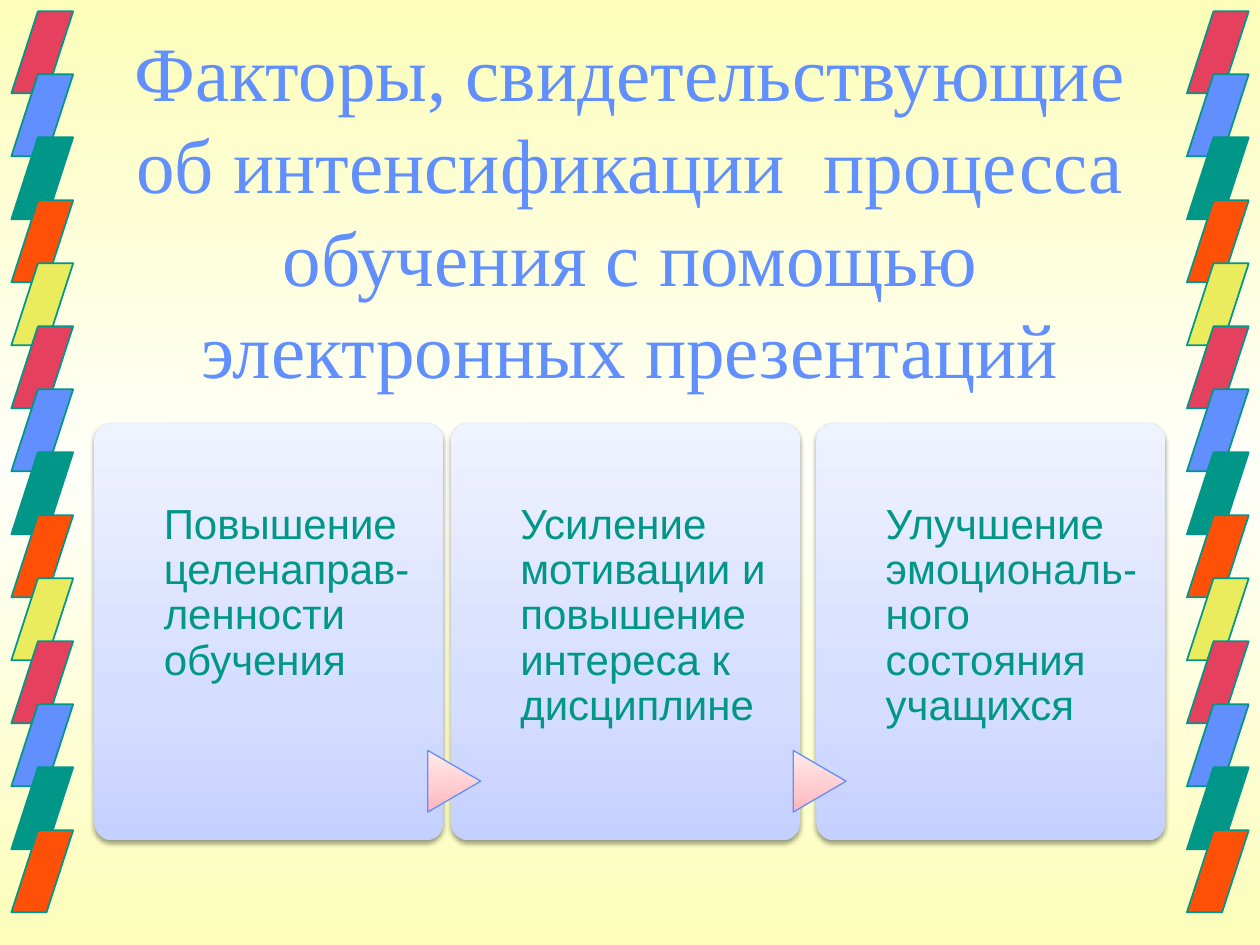
from copy import deepcopy

from lxml import etree
from pptx import Presentation
from pptx.dml.color import RGBColor
from pptx.enum.shapes import MSO_SHAPE
from pptx.enum.text import MSO_ANCHOR, PP_ALIGN
from pptx.oxml.ns import qn
from pptx.util import Inches, Pt

PARALLELOGRAM = MSO_SHAPE.PARALLELOGRAM
ROUNDED = MSO_SHAPE.ROUNDED_RECTANGLE
TRIANGLE = MSO_SHAPE.FLOWCHART_EXTRACT
TOP, MIDDLE = MSO_ANCHOR.TOP, MSO_ANCHOR.MIDDLE
LEFT, CENTER = PP_ALIGN.LEFT, PP_ALIGN.CENTER

RED = RGBColor(0xE5, 0x40, 0x5D)
BLUE = RGBColor(0x61, 0x8F, 0xFD)
GREEN = RGBColor(0x00, 0x96, 0x88)
ORANGE = RGBColor(0xFF, 0x50, 0x08)
YELLOW = RGBColor(0xEA, 0xEC, 0x5E)
BLACK = RGBColor(0x00, 0x00, 0x00)
CREAM = RGBColor(0xFC, 0xFE, 0xB9)
IVORY = RGBColor(0xFF, 0xFF, 0xF9)
RIBBON_COLORS = [RED, BLUE, GREEN, ORANGE, YELLOW]
PAGE_STOPS = [(0, CREAM), (0.5, IVORY), (1, CREAM)]
CARD_STOPS = [(0, RGBColor(0xC4, 0xD0, 0xFF)), (0.35, RGBColor(0xD6, 0xDE, 0xFF)),
              (1, RGBColor(0xEF, 0xF2, 0xFF))]
ARROW_STOPS = [(0, RGBColor(0xFF, 0xB3, 0xBA)), (0.35, RGBColor(0xFF, 0xCA, 0xCE)),
               (1, RGBColor(0xFF, 0xEB, 0xEC))]

TITLE = ("Факторы, свидетельствующие об интенсификации  процесса "
         "обучения с помощью электронных презентаций")
FACTORS = [
    (0.75, "Повышение целенаправ-ленности обучения"),
    (3.58, "Усиление мотивации и повышение интереса к дисциплине"),
    (6.48, "Улучшение эмоциональ-ного состояния учащихся"),
]
CARD_TOP, CARD_WIDTH, CARD_HEIGHT = 3.36, 2.77, 3.31


def set_gradient(fill, element, stops, angle):
    """Fill with a three-stop linear gradient that ignores shape rotation."""
    fill.gradient()
    fill.gradient_angle = angle
    gradient = element.find(".//" + qn("a:gradFill"))
    gradient.set("rotWithShape", "0")
    stop_list = gradient.find(qn("a:gsLst"))
    stop_list.append(deepcopy(stop_list[0]))
    for stop, (position, color) in zip(fill.gradient_stops, stops):
        stop.position = position
        stop.color.rgb = color


def add_shape(container, kind, left, top, width, height):
    """Add a preset shape without a shadow."""
    shape = container.shapes.add_shape(
        kind, Inches(left), Inches(top), Inches(width), Inches(height))
    shape.shadow.inherit = False
    return shape


def set_outline(shape, color, width):
    """Give a shape a solid outline."""
    shape.line.color.rgb = color
    shape.line.width = Pt(width)


def add_soft_shadow(shape):
    """Cast a soft translucent shadow straight down."""
    effects = shape.element.spPr.find(qn("a:effectLst"))
    shadow = etree.SubElement(effects, qn("a:outerShdw"), blurRad=str(Pt(3.1)),
                              dist=str(Pt(1.6)), dir="5400000", rotWithShape="0")
    color = etree.SubElement(shadow, qn("a:srgbClr"), val=str(BLACK))
    etree.SubElement(color, qn("a:alpha"), val="38000")


def add_text(container, text, place, insets, font, size, color, align, anchor):
    """Add a wrapped text box and return its paragraph."""
    box = container.shapes.add_textbox(*[Inches(value) for value in place])
    frame = box.text_frame
    frame.text = text
    frame.word_wrap = True
    frame.vertical_anchor = anchor
    frame.margin_left = frame.margin_right = Inches(insets[0])
    frame.margin_top = frame.margin_bottom = Inches(insets[1])
    para = frame.paragraphs[0]
    para.alignment = align
    span = para.runs[0]
    span.font.name = font
    span.font.size = Pt(size)
    span.font.color.rgb = color
    return para


def add_ribbon(page, left):
    """Stack overlapping parallelograms down one edge of the page."""
    ribbon = page.shapes.add_group_shape()
    for index in range(14):
        tile = add_shape(ribbon, PARALLELOGRAM, left, 0.09 + 0.5 * index, 0.49, 0.65)
        tile.adjustments[0] = 0.43
        tile.fill.solid()
        tile.fill.fore_color.rgb = RIBBON_COLORS[index % len(RIBBON_COLORS)]
        set_outline(tile, GREEN, 1)


def add_card(container, left):
    """Add a shaded rounded card."""
    card = add_shape(container, ROUNDED, left, CARD_TOP, CARD_WIDTH, CARD_HEIGHT)
    card.adjustments[0] = 0.05
    set_gradient(card.fill, card.element, CARD_STOPS, 90)
    card.line.fill.background()
    add_soft_shadow(card)


def add_arrow(container, card_left):
    """Add a triangle pointing into the card that starts at card_left."""
    arrow = add_shape(container, TRIANGLE, card_left - 0.22, 5.99, 0.49, 0.42)
    arrow.rotation = 90
    set_gradient(arrow.fill, arrow.element, ARROW_STOPS, 90)
    set_outline(arrow, BLUE, 0.75)


def add_factors(page):
    """Lay out the three factor cards with arrows between them."""
    diagram = page.shapes.add_group_shape()
    for index, (left, text) in enumerate(FACTORS):
        add_card(diagram, left)
        if index:
            add_arrow(diagram, left)
        para = add_text(diagram, text, (left + 0.55, CARD_TOP, 2.06, CARD_HEIGHT),
                        (0, 0.63), "Arial", 24, GREEN, LEFT, TOP)
        para.line_spacing = 0.9


def main():
    """Build the slide and save it."""
    deck = Presentation()
    deck.slide_width, deck.slide_height = Inches(10), Inches(7.5)
    page = deck.slides.add_slide(deck.slide_layouts[6])
    set_gradient(page.background.fill, page.element, PAGE_STOPS, 270)
    for left in (0.09, 9.42):
        add_ribbon(page, left)
    add_text(page, TITLE, (0.75, 0.15, 8.5, 3.02), (0.1, 0.05),
             "Times New Roman", 44, BLUE, CENTER, MIDDLE)
    add_factors(page)
    deck.save("out.pptx")


if __name__ == "__main__":
    main()
